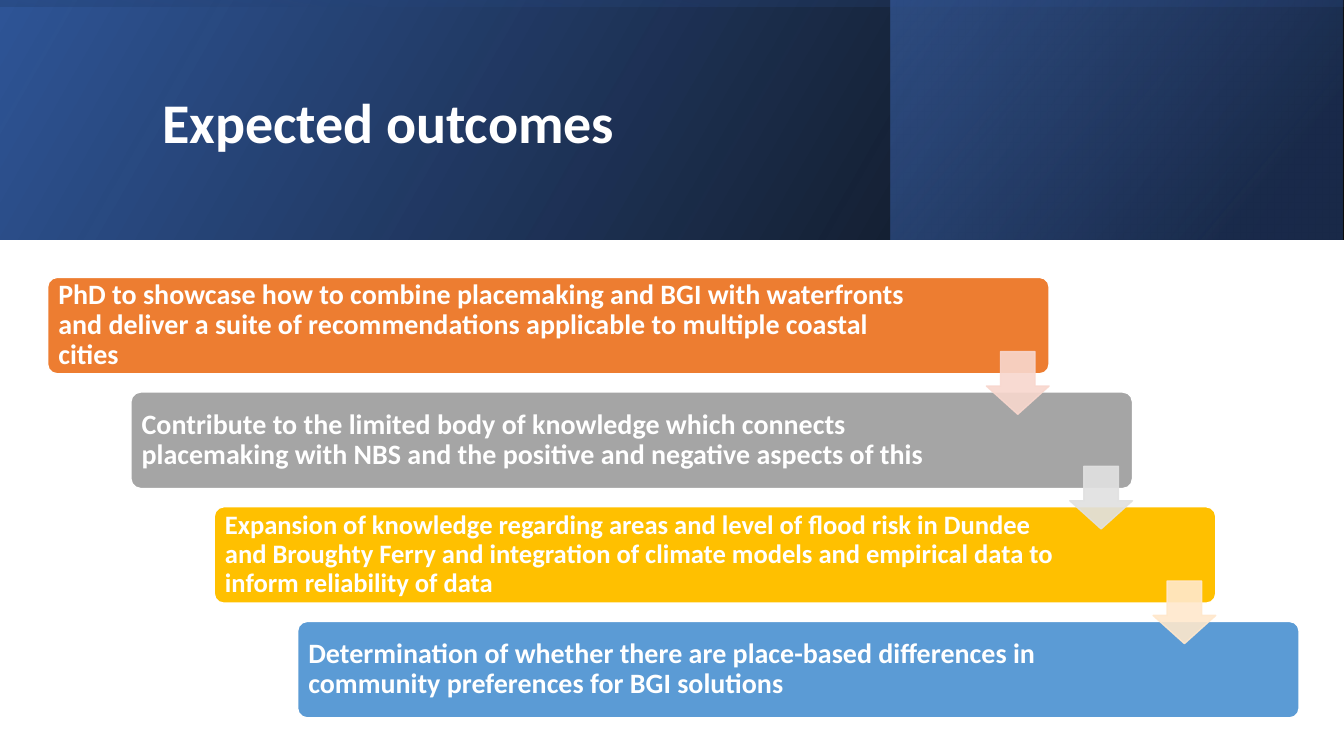
"""Build the "Expected outcomes" slide: a gradient banner above a staircase of four outcomes."""
from lxml.etree import SubElement
from pptx import Presentation
from pptx.dml.color import RGBColor
from pptx.enum.shapes import MSO_SHAPE
from pptx.enum.text import MSO_ANCHOR
from pptx.oxml.ns import qn
from pptx.util import Cm, Pt

RECTANGLE = MSO_SHAPE.RECTANGLE
ROUNDED = MSO_SHAPE.ROUNDED_RECTANGLE
DOWN_ARROW = MSO_SHAPE.DOWN_ARROW
MIDDLE = MSO_ANCHOR.MIDDLE


def paint(shape, *stops, angle=None):
    """Fill with (position, colour, opacity) stops; a single stop also colours the line."""
    shape.shadow.inherit = False
    if angle is None:
        shape.fill.solid()
        color = RGBColor.from_string(stops[0][1])
        shape.fill.fore_color.rgb = color
        shape.line.color.rgb = color if stops[0][2] < 100 else RGBColor.from_string("FFFFFF")
        shape.line.width = Pt(1)
        opacities = [stops[0][2]] * 2
    else:
        shape.line.fill.background()
        shape.fill.gradient()
        shape.fill.gradient_angle = angle
        for stop, (position, color, _) in zip(shape.fill.gradient_stops, stops):
            stop.position = position / 100
            stop.color.rgb = RGBColor.from_string(color)
        opacities = [opacity for _, _, opacity in stops]
    for color, opacity in zip(shape._element.spPr.iter(qn("a:srgbClr")), opacities):
        if opacity < 100:
            SubElement(color, qn("a:alpha"), val=str(opacity * 1000))


def write(text, left, top, width, height, size, inset_x, inset_y):
    """Add a white bold text box, centred vertically."""
    box = page.shapes.add_textbox(Cm(left), Cm(top), Cm(width), Cm(height))
    frame = box.text_frame
    frame.word_wrap = True
    frame.vertical_anchor = MIDDLE
    frame.margin_left = frame.margin_right = Cm(inset_x)
    frame.margin_top = frame.margin_bottom = Cm(inset_y)
    para = frame.paragraphs[0]
    para.line_spacing = 0.9
    span = para.add_run()
    span.text = text
    span.font.name = "Calibri"
    span.font.size = Pt(size)
    span.font.bold = True
    span.font.color.rgb = RGBColor.from_string("FFFFFF")


deck = Presentation()
deck.slide_width, deck.slide_height = Cm(33.87), Cm(19.05)
page = deck.slides.add_slide(deck.slide_layouts[6])

banner_layers = [
    (0, 0, 33.87, 6.03, 0, 30, (0, "000000", 96), (100, "2F5597", 100)),
    (22.44, 0, 11.4, 6.03, 0, 40, (19, "203864", 68), (100, "4472C4", 48)),
    (13.92, -13.92, 6.03, 33.87, 270, 10, (23, "2F5597", 16), (99, "000000", 45)),
]
for left, top, width, height, rotation, angle, first, last in banner_layers:
    layer = page.shapes.add_shape(RECTANGLE, Cm(left), Cm(top), Cm(width), Cm(height))
    paint(layer, first, last, angle=angle)
    layer.rotation = rotation
    layer._element.spPr.xfrm.set("flipH", "1")

write("Expected outcomes", 3.84, 0.97, 27, 4.37, 40, 0.25, 0.13)

outcomes = [
    ("PhD to showcase how to combine placemaking and BGI with waterfronts and deliver "
     "a suite of recommendations applicable to multiple coastal cities",
     "ED7D31", 22.4, 20),
    ("Contribute to the limited body of knowledge which connects placemaking with NBS "
     "and the positive and negative aspects of this",
     "A5A5A5", 21.42, 20),
    ("Expansion of knowledge regarding areas and level of flood risk in Dundee and "
     "Broughty Ferry and integration of climate models and empirical data to inform "
     "reliability of data",
     "FFC000", 21.42, 19),
    ("Determination of whether there are place-based differences in community "
     "preferences for BGI solutions",
     "5B9BD5", 21.42, 20),
]
first_left, first_top = 1.2, 6.99
step_x, step_y = 2.1, 2.89

for index, (text, color, text_width, size) in enumerate(outcomes):
    left, top = first_left + index * step_x, first_top + index * step_y
    bar = page.shapes.add_shape(ROUNDED, Cm(left), Cm(top), Cm(25.24), Cm(2.43))
    bar.adjustments[0] = 0.1
    paint(bar, (0, color, 100))
    write(text, left + 0.07, top + 0.07, text_width, 2.29, size, 0.2, 0.2)

for index, color in enumerate(["F8D7CE", "E1E1E1", "FFE8CC"]):
    left, top = first_left + 23.66 + index * step_x, first_top + 1.87 + index * step_y
    arrow = page.shapes.add_shape(DOWN_ARROW, Cm(left), Cm(top), Cm(1.58), Cm(1.58))
    arrow.adjustments[0], arrow.adjustments[1] = 0.55, 0.45
    paint(arrow, (0, color, 90))

deck.save("out.pptx")
